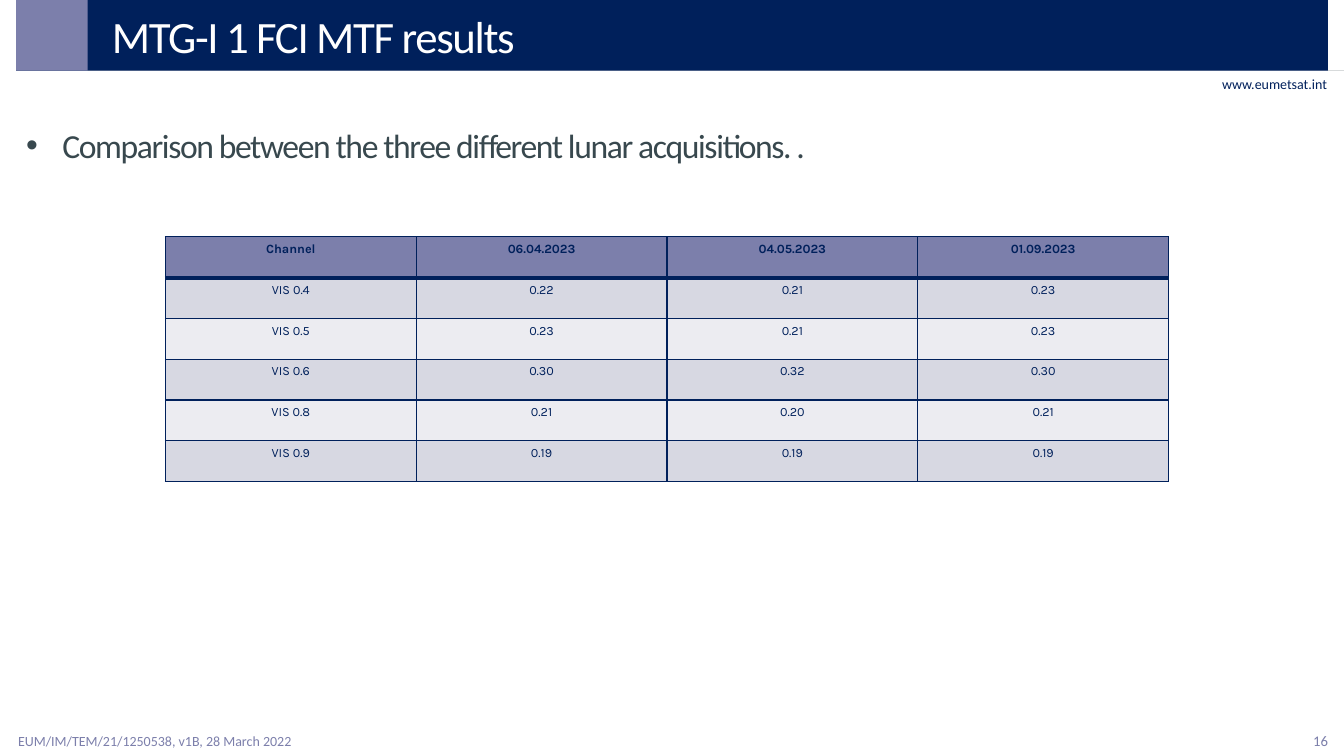
from lxml import etree
from pptx import Presentation, util as u
from pptx.dml.color import RGBColor
from pptx.enum import shapes, text
from pptx.oxml import ns

WIDTH, HEIGHT = 13.33, 7.5
NAVY, LILAC, SLATE, WHITE = "00205B", "7C7FAB", "38484E", "FFFFFF"
BANDS = "D7D8E2", "ECECF1"
LEFT, MIDDLE = text.PP_ALIGN.LEFT, text.MSO_ANCHOR.MIDDLE
CENTER, RIGHT = text.PP_ALIGN.CENTER, text.PP_ALIGN.RIGHT

RESULTS = [
    ("Channel", "06.04.2023", "04.05.2023", "01.09.2023"),
    ("VIS 0.4", "0.22", "0.21", "0.23"),
    ("VIS 0.5", "0.23", "0.21", "0.23"),
    ("VIS 0.6", "0.30", "0.32", "0.30"),
    ("VIS 0.8", "0.21", "0.20", "0.21"),
    ("VIS 0.9", "0.19", "0.19", "0.19"),
]


def color(value):
    return RGBColor.from_string(value)


def inches(*lengths):
    return [u.Inches(length) for length in lengths]


def add(parent, tag, **attributes):
    child = etree.SubElement(parent, ns.qn(tag))
    for name, value in attributes.items():
        child.set(name, str(value))
    return child


def write(tf, content, size, fill, font="Calibri", align=LEFT, bold=False,
          spacing=0, margin=0, indent=0, bullet=None):
    p = tf.paragraphs[0]
    p.alignment = align
    pPr = p._p.get_or_add_pPr()
    pPr.set("marL", str(u.Inches(margin)))
    pPr.set("indent", str(u.Inches(indent)))
    if bullet:
        add(pPr, "a:buFont", typeface="Arial")
        add(pPr, "a:buChar", char=bullet)
    r = p.add_run()
    r.text = content
    r.font.name, r.font.size, r.font.bold = font, u.Pt(size), bold
    r.font.color.rgb = color(fill)
    if spacing:
        r._r.get_or_add_rPr().set("spc", str(spacing * 100))


def set_frame(tf, insets, wrap=True, anchor=text.MSO_ANCHOR.TOP):
    tf.word_wrap, tf.auto_size = wrap, text.MSO_AUTO_SIZE.NONE
    tf.vertical_anchor = anchor
    (tf.margin_left, tf.margin_top,
     tf.margin_right, tf.margin_bottom) = inches(*insets)


def label(s, box, content, size, fill, insets=(0.1, 0.05, 0.1, 0.05),
          wrap=True, **style):
    tf = s.shapes.add_textbox(*inches(*box)).text_frame
    set_frame(tf, insets, wrap)
    write(tf, content, size, fill, **style)


def bar(s, box, fill):
    sp = s.shapes.add_shape(shapes.MSO_SHAPE.RECTANGLE, *inches(*box))
    sp.shadow.inherit = False
    sp.fill.solid()
    sp.fill.fore_color.rgb = color(fill)
    sp.line.fill.background()


def header(s, box, title):
    x, y, w, h = box
    rule = s.shapes.add_connector(shapes.MSO_CONNECTOR.STRAIGHT,
                                  *inches(x, y + h, WIDTH, y + h))
    rule.line.width = u.Pt(0.5)
    rule.line.color.rgb = color(SLATE)
    rule_color = next(rule.element.iter(ns.qn("a:srgbClr")))
    add(rule_color, "a:alpha", val=20000)
    add(rule.element.spPr, "a:effectLst")
    bar(s, box, NAVY)
    bar(s, (x, y, h, h), LILAC)
    sp = s.shapes.title
    sp.left, sp.top, sp.width, sp.height = inches(
        x + h, 0, WIDTH - x - h, y + h)
    s.shapes.element.append(sp.element)
    set_frame(sp.text_frame, (0, 0.04, 0.04, 0.04), anchor=MIDDLE)
    write(sp.text_frame, title, 32, WHITE, spacing=-1, margin=0.24)
    label(s, (x + w - 1.25, y + h, 1.34, 0.27), "www.eumetsat.int", 10, NAVY,
          wrap=False, align=RIGHT)


def footer(s, box, reference, number):
    x, y, w, h = box
    label(s, (x, y + 0.06, 5.06, 0.17), reference, 10, LILAC,
          insets=(0, 0, 0, 0))
    label(s, (x + w - 0.67, y, 0.67, h), number, 10.5, LILAC, align=RIGHT)


def set_borders(cell, top, bottom):
    tcPr = cell._tc.get_or_add_tcPr()
    for side, width in zip("LRTB", (1, 1, top, bottom)):
        line = add(tcPr, f"a:ln{side}", w=u.Pt(width))
        add(add(line, "a:solidFill"), "a:srgbClr", val=NAVY)


def results_table(s, box, rows):
    table = s.shapes.add_table(len(rows), len(rows[0]), *inches(*box)).table
    for i, values in enumerate(rows):
        for j, value in enumerate(values):
            cell = table.cell(i, j)
            set_borders(cell, 3 if i == 1 else 1, 3 if i == 0 else 1)
            cell.fill.solid()
            cell.fill.fore_color.rgb = color(BANDS[(i - 1) % 2] if i else LILAC)
            write(cell.text_frame, value, 9, NAVY, font="Karla",
                  align=CENTER, bold=i == 0)


def results_slide(prs):
    s = prs.slides.add_slide(prs.slide_layouts[5])
    header(s, (0.16, -0.01, 13.01, 0.71), "MTG-I 1 FCI MTF results")
    results_table(s, (1.64, 2.35, 9.95, 2.43), RESULTS)
    label(s, (0.16, 1.19, 12.72, 1.46),
          "Comparison between the three different lunar acquisitions. .",
          24, SLATE, spacing=-1, margin=0.36, indent=-0.36, bullet="•")
    footer(s, (0.18, 7.21, 13.09, 0.29),
           "EUM/IM/TEM/21/1250538, v1B, 28 March 2022", "16")


def main():
    prs = Presentation()
    prs.slide_width, prs.slide_height = inches(WIDTH, HEIGHT)
    results_slide(prs)
    prs.save("out.pptx")


if __name__ == "__main__":
    main()
